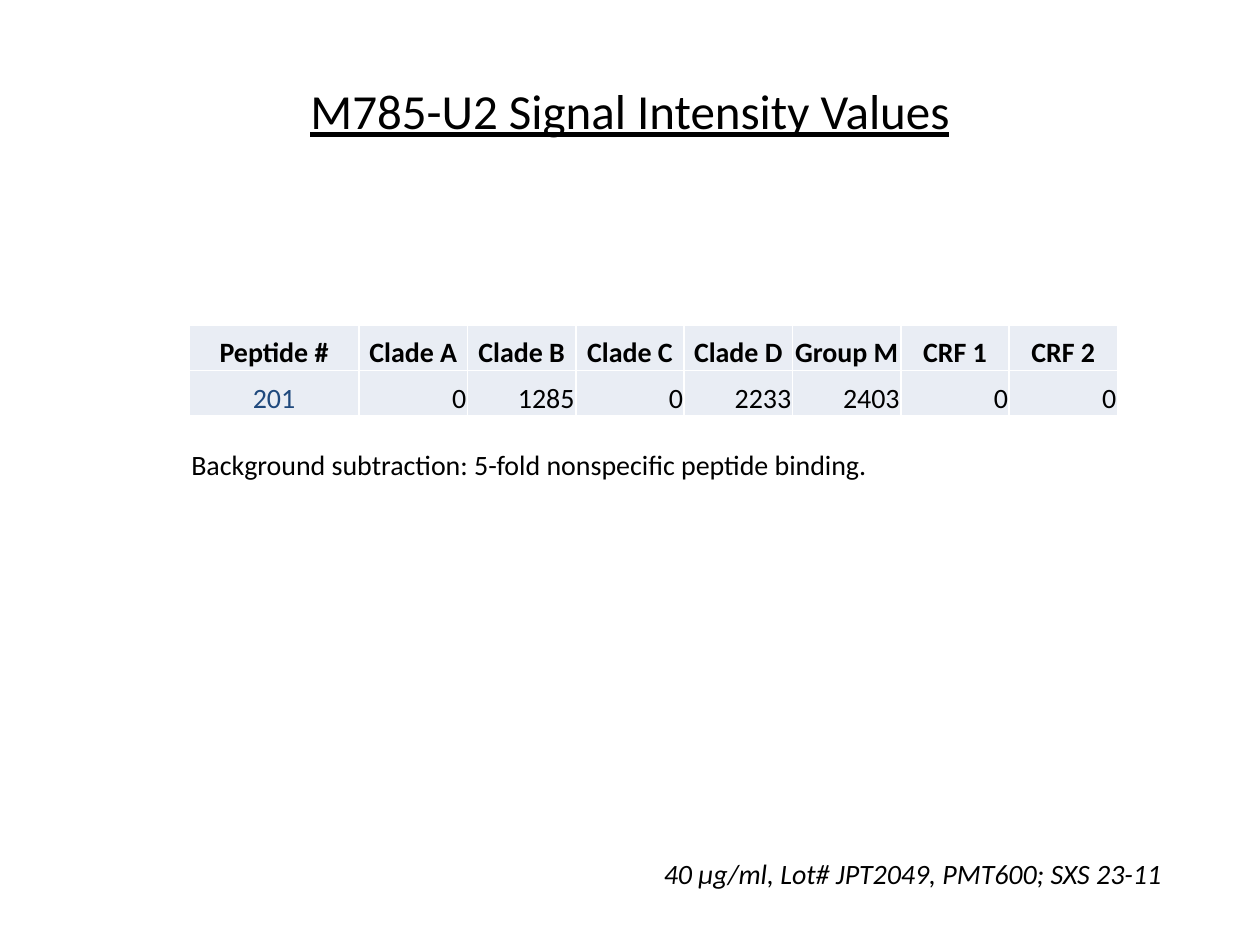
from pptx import Presentation
from pptx.dml.color import RGBColor
from pptx.enum.text import MSO_ANCHOR, MSO_AUTO_SIZE, PP_ALIGN
from pptx.util import Inches, Pt

LEFT, CENTER, RIGHT = PP_ALIGN.LEFT, PP_ALIGN.CENTER, PP_ALIGN.RIGHT
MIDDLE, BOTTOM = MSO_ANCHOR.MIDDLE, MSO_ANCHOR.BOTTOM
FIT_SHAPE = MSO_AUTO_SIZE.SHAPE_TO_FIT_TEXT

BLACK = RGBColor(0x00, 0x00, 0x00)
NAVY = RGBColor(0x1F, 0x49, 0x7D)
PALE_BLUE = RGBColor(0xE9, 0xED, 0xF4)

FONT = "Calibri"
TITLE_ONLY = 5
SLIDE_WIDTH, SLIDE_HEIGHT = 10, 7.5
LABEL_WIDTH, VALUE_WIDTH, ROW_HEIGHT = 1.35, 0.86, 0.36
CELL_MARGIN = 0.01

HEADERS = ["Peptide #", "Clade A", "Clade B", "Clade C", "Clade D",
           "Group M", "CRF 1", "CRF 2"]
PEPTIDE_ROWS = [["201", "0", "1285", "0", "2233", "2403", "0", "0"]]


def write_text(text_frame, text, size=16, color=BLACK, align=LEFT,
               bold=False, italic=False, underline=False):
    paragraph = text_frame.paragraphs[0]
    paragraph.alignment = align
    run = paragraph.add_run()
    run.text = text
    font = run.font
    font.name, font.size, font.color.rgb = FONT, Pt(size), color
    font.bold, font.italic, font.underline = bold, italic, underline


def add_title(slide, text):
    title = slide.shapes.title
    title.left, title.top = Inches(SLIDE_WIDTH * 0.05), Inches(0.25)
    title.width, title.height = Inches(SLIDE_WIDTH * 0.9), Inches(1.25)
    title.text_frame.vertical_anchor = MIDDLE
    write_text(title.text_frame, text, size=28, align=CENTER, underline=True)


def add_note(slide, text, left, top, width, **text_format):
    box = slide.shapes.add_textbox(Inches(left), Inches(top), Inches(width), Inches(0.37))
    box.text_frame.word_wrap = False
    box.text_frame.auto_size = FIT_SHAPE
    write_text(box.text_frame, text, **text_format)


def fill_cell(cell, text, **text_format):
    cell.fill.solid()
    cell.fill.fore_color.rgb = PALE_BLUE
    cell.vertical_anchor = BOTTOM
    cell.margin_left = cell.margin_right = cell.margin_top = Inches(CELL_MARGIN)
    cell.margin_bottom = 0
    write_text(cell.text_frame, text, **text_format)


def add_intensity_table(slide, left, top):
    rows = [HEADERS] + PEPTIDE_ROWS
    widths = [LABEL_WIDTH] + [VALUE_WIDTH] * (len(HEADERS) - 1)
    table = slide.shapes.add_table(
        len(rows), len(widths), Inches(left), Inches(top),
        Inches(sum(widths)), Inches(ROW_HEIGHT * len(rows))).table
    table.first_row = table.horz_banding = False
    for column, width in zip(table.columns, widths):
        column.width = Inches(width)
    for row_index, row in enumerate(rows):
        table.rows[row_index].height = Inches(ROW_HEIGHT)
        for column_index, text in enumerate(row):
            is_header, is_label = row_index == 0, column_index == 0
            fill_cell(table.cell(row_index, column_index), text,
                      bold=is_header,
                      color=NAVY if is_label and not is_header else BLACK,
                      align=CENTER if is_header or is_label else RIGHT)


def main():
    presentation = Presentation()
    presentation.slide_width = Inches(SLIDE_WIDTH)
    presentation.slide_height = Inches(SLIDE_HEIGHT)
    slide = presentation.slides.add_slide(presentation.slide_layouts[TITLE_ONLY])
    add_title(slide, "M785-U2 Signal Intensity Values")
    add_intensity_table(slide, left=1.5, top=2.58)
    add_note(slide, "40 µg/ml, Lot# JPT2049, PMT600; SXS 23-11",
             left=5.17, top=SLIDE_HEIGHT * 0.9, width=4.21, italic=True)
    add_note(slide, "Background subtraction: 5-fold nonspecific peptide binding.",
             left=1.42, top=3.5, width=5.68)
    presentation.save("out.pptx")


if __name__ == "__main__":
    main()
